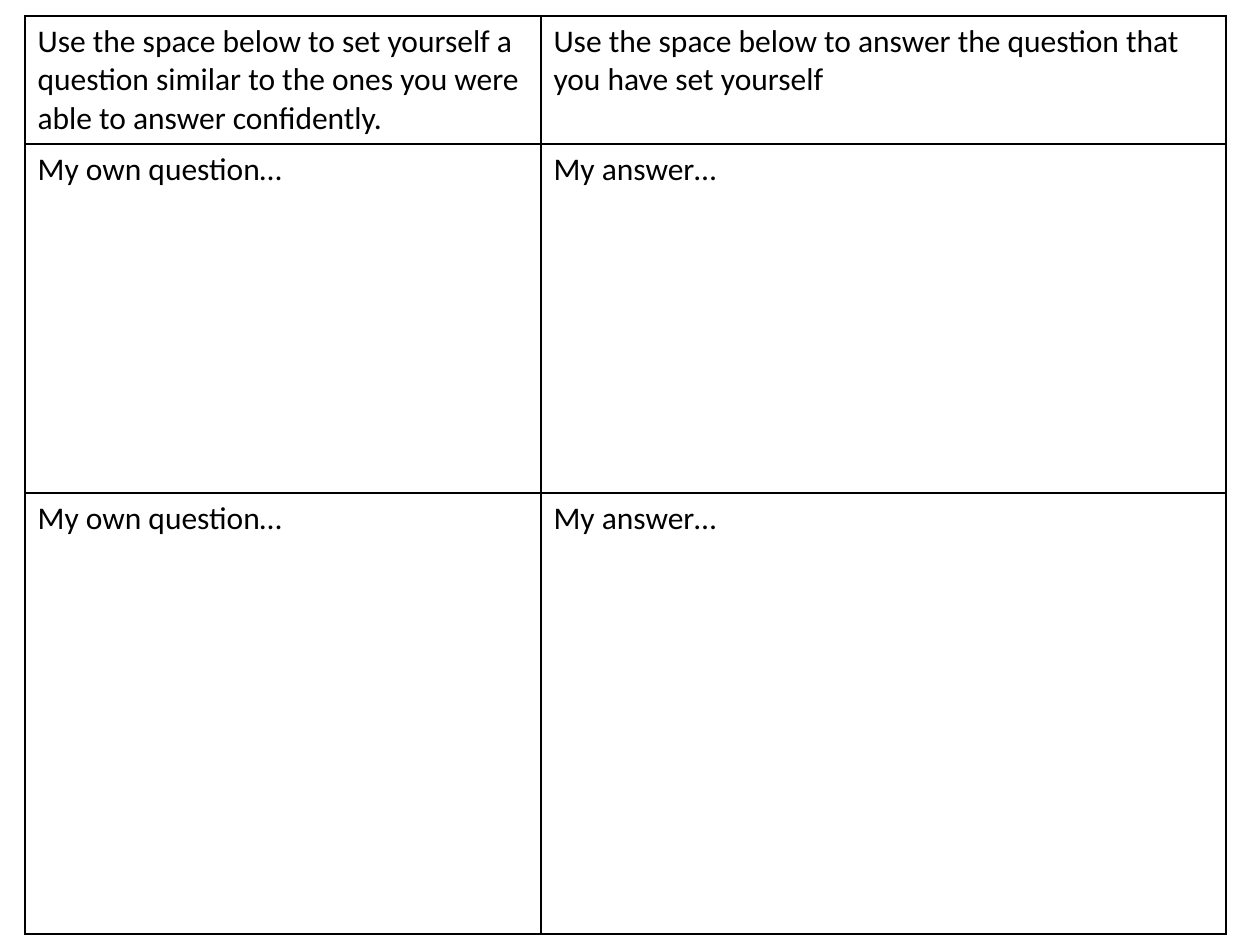
from lxml.etree import SubElement
from pptx import Presentation
from pptx.dml.color import RGBColor
from pptx.oxml.ns import qn
from pptx.util import Pt

PX = 914400 // 126  # EMU per px
COLORS = {"ink": "000000"}
FONT, TEXT_SIZE, BORDER = "Calibri", Pt(18), Pt(1)

# Content
PROMPTS = ("My own question…", "My answer…")
ROWS = [
    (
        "Use the space below to set yourself a question similar to the ones "
        "you were able to answer confidently.",
        "Use the space below to answer the question that you have set yourself",
    ),
    PROMPTS,
    PROMPTS,
]
LEFT, TOP = 25, 16
COLUMN_WIDTHS = [516, 685]
ROW_HEIGHTS = [124, 349, 441]


def add_borders(cell):
    properties = cell._tc.get_or_add_tcPr()
    for side in ("lnL", "lnR", "lnT", "lnB"):
        line = SubElement(properties, qn(f"a:{side}"), w=str(BORDER))
        fill = SubElement(line, qn("a:solidFill"))
        SubElement(fill, qn("a:srgbClr"), val=COLORS["ink"])


def fill_cell(cell, text):
    add_borders(cell)
    cell.fill.background()
    cell.text_frame.text = text
    font = cell.text_frame.paragraphs[0].runs[0].font
    font.name, font.size, font.bold = FONT, TEXT_SIZE, False
    font.color.rgb = RGBColor.from_string(COLORS["ink"])


def main():
    deck = Presentation()
    deck.slide_width, deck.slide_height = 1260 * PX, 945 * PX
    page = deck.slides.add_slide(deck.slide_layouts[6])

    # Question and answer grid
    table = page.shapes.add_table(
        len(ROWS), len(COLUMN_WIDTHS), LEFT * PX, TOP * PX,
        sum(COLUMN_WIDTHS) * PX, sum(ROW_HEIGHTS) * PX,
    ).table
    table.first_row = table.horz_banding = False
    for column, width in zip(table.columns, COLUMN_WIDTHS):
        column.width = width * PX
    for row, height, texts in zip(table.rows, ROW_HEIGHTS, ROWS):
        row.height = height * PX
        for cell, text in zip(row.cells, texts):
            fill_cell(cell, text)

    deck.save("out.pptx")


if __name__ == "__main__":
    main()
